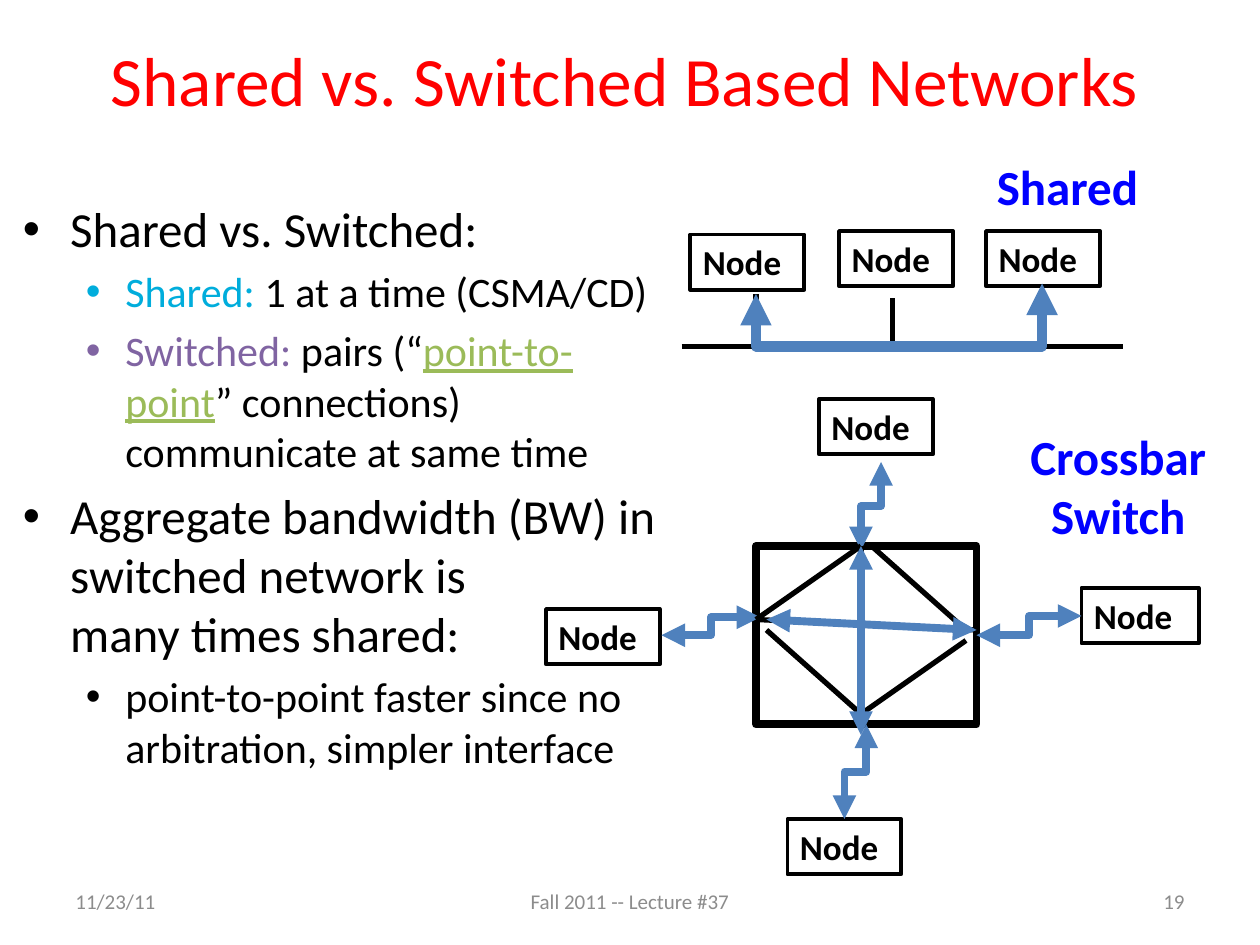
from dataclasses import dataclass

from lxml import etree
from pptx import Presentation
from pptx.dml.color import RGBColor
from pptx.enum.shapes import MSO_CONNECTOR, MSO_SHAPE
from pptx.enum.text import MSO_ANCHOR, PP_ALIGN
from pptx.oxml.ns import qn
from pptx.util import Pt

LINE, BENT = MSO_CONNECTOR.STRAIGHT, MSO_CONNECTOR.ELBOW
RECT = MSO_SHAPE.RECTANGLE
TOP, MID = MSO_ANCHOR.TOP, MSO_ANCHOR.MIDDLE
LEFT, CENTER, RIGHT = PP_ALIGN.LEFT, PP_ALIGN.CENTER, PP_ALIGN.RIGHT


@dataclass(frozen=True)
class Theme:
    font: str = "Calibri"
    black: str = "000000"
    red: str = "FF0000"
    blue: str = "0000FF"
    steel: str = "4F81BD"
    cyan: str = "00ADDC"
    plum: str = "8064A2"
    green: str = "9BBB59"
    grey: str = "8C8C8C"
    title: float = 39.6
    head: int = 28
    sub: int = 24
    node: int = 20
    foot: int = 12


T = Theme()
NODE_W, NODE_H = 65, 31.6


def pts(*vals):
    return [Pt(v) for v in vals]


def assign(obj, vals):
    for key, val in vals.items():
        setattr(obj, key, val)


def add_run(para, text, size, color, **extra):
    run = para.add_run()
    run.text = text
    assign(run.font, {"name": T.font, "size": Pt(size), **extra})
    run.font.color.rgb = RGBColor.from_string(color)


def set_text(shape, text, size, color, align=LEFT, anchor=TOP, **extra):
    frame = shape.text_frame
    assign(frame, {"word_wrap": True, "vertical_anchor": anchor})
    for i, row in enumerate(text.split("\n")):
        para = frame.add_paragraph() if i else frame.paragraphs[0]
        para.alignment = align
        add_run(para, row, size, color, **extra)


def label(slide, box, *args, **extra):
    set_text(slide.shapes.add_textbox(*pts(*box)), *args, **extra)


def stroke(shape, color, width, arrows=False):
    shape.line.color.rgb = RGBColor.from_string(color)
    shape.line.width = Pt(width)
    if arrows:
        ln = shape.line._get_or_add_ln()
        for tag in ("a:headEnd", "a:tailEnd"):
            etree.SubElement(ln, qn(tag), type="triangle")


def frame_box(slide, box, width):
    shape = slide.shapes.add_shape(RECT, *pts(*box))
    shape.shadow.inherit = False
    shape.fill.background()
    stroke(shape, T.black, width)
    return shape


def node(slide, x, y, w=NODE_W):
    shape = frame_box(slide, (x, y, w, NODE_H), 2.25)
    set_text(shape, "Node", T.node, T.black, bold=True)


def link(slide, ends, color=T.black, width=3, arrows=False, kind=LINE):
    con = slide.shapes.add_connector(kind, *pts(*ends))
    stroke(con, color, width, arrows)
    etree.SubElement(con._element.spPr, qn("a:effectLst"))
    return con


def arrow(slide, ends, kind=LINE):
    return link(slide, ends, T.steel, 4.5, True, kind)


def upright(slide, x1, y1, x2, y2):
    """Elbow that leaves vertically: lay it flat, then turn it 90 degrees."""
    mx, my = (x1 + x2) / 2, (y1 + y2) / 2
    dx, dy = (x2 - x1) / 2, (y2 - y1) / 2
    con = arrow(slide, (mx - dy, my + dx, mx + dy, my - dx), BENT)
    con._element.spPr.find(qn("a:xfrm")).set("rot", "5400000")


def bullet(para, level):
    size = T.sub if level else T.head
    left, hang = (58.5, 22.5) if level else (27, 27)
    para.level = level
    para.space_before = Pt(size * 0.2)
    props = para._p.get_or_add_pPr()
    props.set("marL", str(Pt(left)))
    props.set("indent", str(-Pt(hang)))
    etree.SubElement(props, qn("a:buFont"), typeface="Arial")
    etree.SubElement(props, qn("a:buChar"), char="•")
    return size


def bullets(slide, box, items):
    frame = slide.shapes.add_textbox(*pts(*box)).text_frame
    frame.word_wrap = True
    for i, (level, runs) in enumerate(items):
        para = frame.add_paragraph() if i else frame.paragraphs[0]
        size = bullet(para, level)
        for text, color in runs:
            for j, part in enumerate(text.split("\n")):
                if j:
                    para.add_line_break()
                add_run(para, part, size, color, underline=color == T.green)


def shared(slide):
    # Nodes on one bus
    for x, y in ((394.5, 134), (479.5, 132), (563.5, 132)):
        node(slide, x, y)
    link(slide, (389.5, 198, 641.5, 198))
    for x, y1, y2 in ((594, 168, 192), (510, 170.5, 198), (432, 168, 192)):
        link(slide, (x, y1, x, y2))
    # The one active path
    form = slide.shapes.build_freeform(*pts(432, 168), scale=1.0)
    form.add_line_segments([pts(432, 198), pts(595.5, 198), pts(595.5, 162)],
                           close=False)
    path = form.convert_to_shape()
    path.shadow.inherit = False
    path.fill.background()
    stroke(path, T.steel, 6, True)
    label(slide, (562.5, 86, 109.5, 41), "Shared", T.head, T.blue, bold=True)


def crossbar(slide):
    label(slide, (564, 240, 150, 75), "Crossbar\nSwitch", T.head, T.blue,
          CENTER, bold=True)
    # Nodes around the switch
    for x, y, w in ((312, 348, NODE_W), (450, 468, NODE_W),
                    (618, 336, 67), (468, 228, NODE_W)):
        node(slide, x, y, w)
    frame_box(slide, (432, 312, 126, 102), 4.5)
    # Links from nodes to switch
    upright(slide, 482.5, 468, 495, 414)
    arrow(slide, (618, 352, 558, 363), BENT)
    arrow(slide, (434.5, 352.75, 378, 363), BENT)
    upright(slide, 492, 314.5, 503.5, 264)
    # Paths inside the switch
    for ends in ((432, 354, 558, 360), (432, 354, 492, 312),
                 (438, 360, 492, 408), (498, 312, 552, 360),
                 (492, 408, 552, 366), (492, 312, 492, 408)):
        link(slide, ends)
    arrow(slide, (438, 354, 558, 360))
    arrow(slide, (492, 312, 492, 420))


def main():
    prs = Presentation()
    prs.slide_width, prs.slide_height = pts(720, 540)
    slide = prs.slides.add_slide(prs.slide_layouts[5])

    # Title
    title = slide.shapes.title
    assign(title, dict(zip(("left", "top", "width", "height"),
                           pts(30, 12, 654, 66))))
    set_text(title, "Shared vs. Switched Based Networks", T.title, T.red,
             CENTER, MID)

    # Main points
    bullets(slide, (6, 110, 384, 358), [
        (0, [("Shared vs. Switched:", T.black)]),
        (1, [("Shared: ", T.cyan), ("1 at a time (CSMA/CD)", T.black)]),
        (1, [("Switched:", T.plum), (" pairs (“", T.black),
             ("point-to-point", T.green),
             ("” connections) communicate at same time", T.black)]),
        (0, [("Aggregate bandwidth (BW) in switched network is\n"
              "many times shared:", T.black)]),
        (1, [("point-to-point faster since no arbitration, "
              "simpler interface", T.black)]),
    ])

    # Diagrams
    shared(slide)
    crossbar(slide)

    # Footer
    for x, w, text, align in ((36, 168, "11/23/11", LEFT),
                              (516, 168, "19", RIGHT),
                              (246, 228, "Fall 2011 -- Lecture #37", CENTER)):
        label(slide, (x, 500.5, w, 28.75), text, T.foot, T.grey, align, MID)
    prs.save("out.pptx")


if __name__ == "__main__":
    main()
